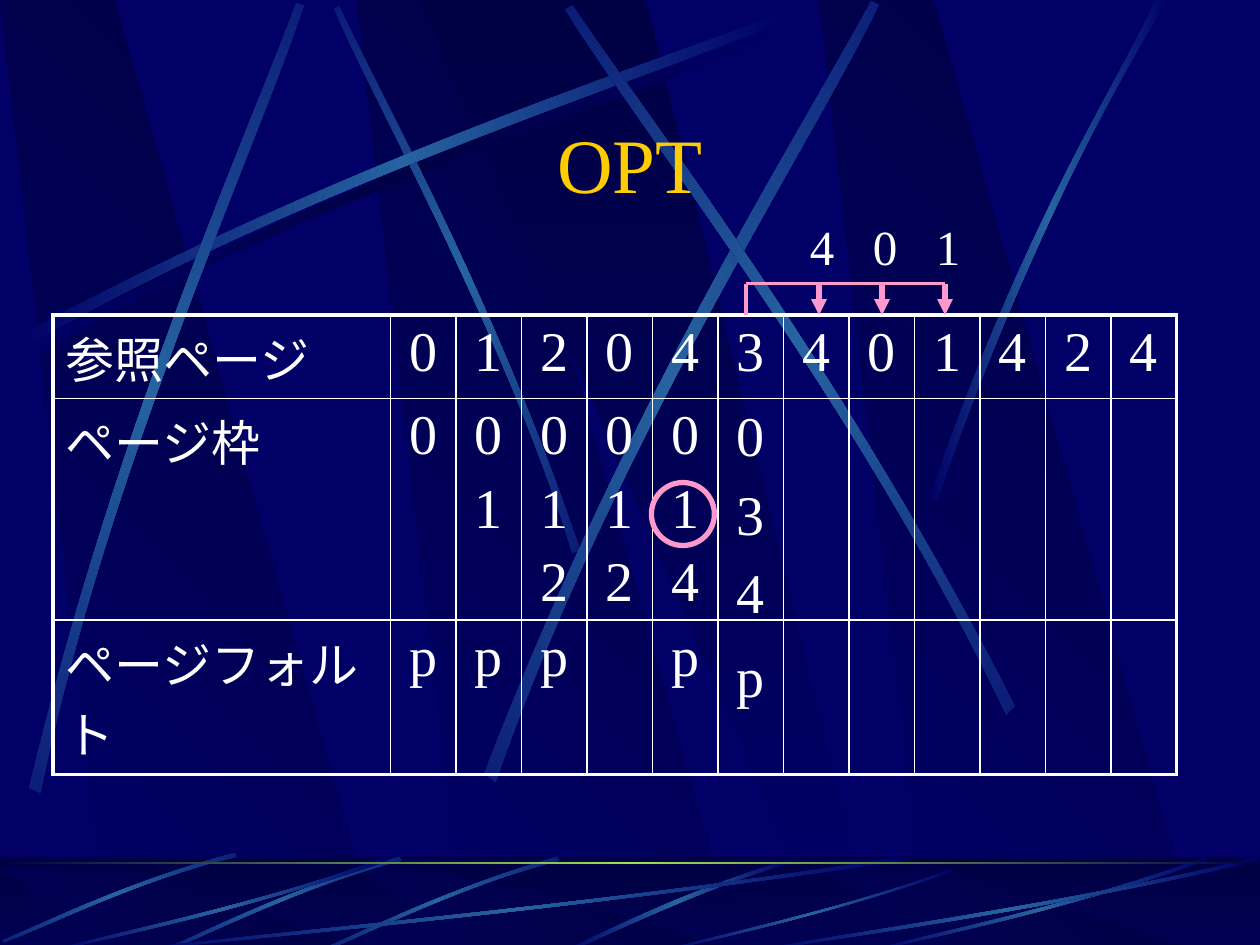
from math import cos, radians, sin
from typing import NamedTuple

from pptx import Presentation
from pptx.dml.color import RGBColor as RGB
from pptx.enum.shapes import MSO_CONNECTOR as CONN, MSO_SHAPE as SHAPE
from pptx.enum.text import MSO_ANCHOR as ANCHOR, MSO_AUTO_SIZE as AUTO, PP_ALIGN as ALIGN
from pptx.oxml import parse_xml
from pptx.oxml.ns import qn
from pptx.util import Inches, Pt
from lxml.etree import SubElement

HEX = {"navy": "000066", "dark": "000044", "blue": "2663A0", "green": "9CE157",
       "gold": "FFCC00", "white": "FFFFFF", "pink": "FF99CC"}
FONT = "Times New Roman"
NS = 'xmlns:a="http://schemas.openxmlformats.org/drawingml/2006/main"'
GLOW = ("navy", "blue", "navy")
SHADE = ("navy", "dark", "navy")


class Streak(NamedTuple):
    out: tuple  # four Bezier points, x and y in turn
    back: tuple
    mid: tuple = (0, 0)  # centre of rotation
    rot: float = 0
    tint: tuple = GLOW


class Label(NamedTuple):
    lines: str
    box: tuple
    size: int
    wrap: bool


TOP = [
    Streak((.2, 2.75, 2.84, 1.34, 5.24, .59, 6.26, .18),
           (6.29, .24, 5.28, .69, 2.54, 1.51, .23, 2.85), tint=SHADE),
    Streak((4.6, 4.36, 3.91, 2.34, 3.02, .77, 2.69, .05),
           (2.65, .07, 2.95, .79, 3.98, 2.58, 4.54, 4.39), (3.62, 2.22), 45),
    Streak((.14, 2.67, 2.78, 1.25, 5.18, .51, 6.2, .1),
           (6.23, .16, 5.22, .61, 2.48, 1.43, .17, 2.77)),
    Streak((.23, 6.25, .93, 3.34, 1.97, 1.05, 2.35, .02),
           (2.41, .04, 2.07, 1.09, .86, 3.68, .32, 6.29), (1.33, 3.16), 311.7),
    Streak((3.85, 6.14, 4.98, 3.2, 6.38, 1.02, 6.92, .01),
           (6.98, .04, 6.49, 1.08, 4.86, 3.55, 3.94, 6.21), (5.43, 3.1), 321.6),
    Streak((8.06, 5.6, 6.7, 2.93, 5.16, .95, 4.55, .04),
           (4.49, .07, 5.07, 1.01, 6.85, 3.25, 7.99, 5.67), (6.27, 2.86), 34.7),
    Streak((7.38, 3.94, 8.14, 1.73, 8.88, .66, 9.17, 0),
           (9.27, 0, 8.36, 1.45, 7.69, 3.22, 7.44, 3.97)),
]
FLOOR = [
    Streak((6.27, 6.82, 5.37, 7.09, 4.77, 7.42, 4.48, 7.54),
           (4.53, 7.55, 4.9, 7.38, 5.71, 7, 6.28, 6.85)),
    *(Streak((x + 1.84, 6.8, x + .97, 7.05, x + .29, 7.4, x - .02, 7.53),
             (x - .01, 7.55, x + .3, 7.43, x + 1.07, 7.03, x + 1.86, 6.83),
             (x + .92, 7.18), 315) for x in (2.58, 1.33)),
    Streak((1.86, 6.77, .99, 7, .33, 7.34, .02, 7.46),
           (.03, 7.48, .34, 7.37, 1.1, 6.98, 1.88, 6.8), (.95, 7.13), 315),
    Streak((7.17, 6.83, 4.49, 7.23, 2.06, 7.44, 1.03, 7.55),
           (1, 7.54, 2.02, 7.41, 4.8, 7.18, 7.14, 6.8)),
    Streak((3.08, 6.83, 1.93, 7.23, .88, 7.44, .43, 7.55),
           (.42, 7.54, .86, 7.41, 2.06, 7.18, 3.07, 6.8)),
    Streak((7.58, 6.91, 6.58, 7.26, 5.67, 7.45, 5.28, 7.55),
           (5.27, 7.54, 5.65, 7.43, 6.69, 7.22, 7.57, 6.89)),
    Streak((9.58, 6.83, 8.43, 7.23, 7.38, 7.44, 6.93, 7.55),
           (6.92, 7.54, 7.36, 7.41, 8.56, 7.18, 9.57, 6.8)),
    Streak((10, 6.83, 8.27, 7.23, 6.69, 7.44, 6.02, 7.55),
           (6, 7.54, 6.66, 7.41, 8.46, 7.18, 9.98, 6.8)),
]
# One character per line of a cell
ROWS = [
    ["参照ページ", *"012043401424"],
    ["ページ枠", "0", "01", "012", "012", "014", *[""] * 7],
    ["ページフォルト", *"ppp", "", "p", *[""] * 7],
]
LABELS = [Label(n, (6.33 + .5 * i, 1.67, .4, .57), 28, False) for i, n in enumerate("401")]
LABELS += [Label("p", (5.7, 5.04, .52, .63), 32, True),
           Label("034", (5.7, 3.13, .52, 1.91), 32, True)]


def paint(shape, tint: tuple, ang: int = 0) -> None:
    """Fill with an even gradient and take off line and shadow."""
    step = 100000 // (len(tint) - 1)
    stops = "".join(f'<a:gs pos="{i * step}"><a:srgbClr val="{HEX[c]}"/></a:gs>'
                    for i, c in enumerate(tint))
    shape.shadow.inherit = False
    shape.line.fill.background()
    shape.fill.background()
    prop = shape.element.spPr
    prop.replace(prop.find(qn("a:noFill")), parse_xml(
        f'<a:gradFill {NS} rotWithShape="1"><a:gsLst>{stops}</a:gsLst>'
        f'<a:lin ang="{ang * 60000}" scaled="1"/></a:gradFill>'))


def outline(shapes, pts: list):
    pts = [(Inches(x), Inches(y)) for x, y in pts]
    pen = shapes.build_freeform(*pts[0], scale=1.0)
    pen.add_line_segments(pts[1:], close=True)
    return pen.convert_to_shape()


def bend(shape) -> None:
    """Turn the two long sides of an eight-point outline into curves."""
    track = next(shape.element.iter(qn("a:path")))
    legs = track.findall(qn("a:lnTo"))
    for trio in (legs[:3], legs[4:7]):
        arc = SubElement(track, qn("a:cubicBezTo"))
        trio[0].addprevious(arc)
        for leg in trio:
            arc.append(leg[0])
            track.remove(leg)


def draw_streak(shapes, s: Streak) -> None:
    (cx, cy), a = s.mid, radians(-s.rot)
    flat = s.out + s.back
    pts = [(cx + (x - cx) * cos(a) - (y - cy) * sin(a),
            cy + (x - cx) * sin(a) + (y - cy) * cos(a))
           for x, y in zip(flat[::2], flat[1::2])]
    shape = outline(shapes, pts)
    bend(shape)
    shape.rotation = s.rot
    paint(shape, s.tint)


def draw_bands(shapes, top: float, low: float) -> None:
    for x in (2.83, 0, 6.5):
        band = outline(shapes, [(x + .86, low), (x + 3.02, low), (x + .91, top), (x, top)])
        paint(band, ("navy", "dark"), 315)
    wide = outline(shapes, [(3.33, top), (6.58, low), (6.94, low), (5.13, top)])
    paint(wide, ("dark", "navy"), 90)


def add_rect(shapes, y: float, h: float, tint: tuple, ang: int = 0):
    rect = shapes.add_shape(SHAPE.RECTANGLE, 0, Inches(y), Inches(10), Inches(h))
    paint(rect, tint, ang)
    return rect


def add_backdrop(shapes, master) -> None:
    """Draw the backdrop and hand its shapes over to the slide master."""
    first = len(shapes)
    draw_bands(shapes, 0, 7.52)
    for s in TOP:
        draw_streak(shapes, s)
    add_rect(shapes, 6.8, .75, ("dark", "navy"), 90)
    draw_bands(shapes, 6.88, 7.55)
    veil = add_rect(shapes, 6.8, .75, ("dark", "dark"))
    veil.fill.solid()
    veil.fill.fore_color.rgb = RGB.from_string(HEX["dark"])
    tone = veil.element.spPr.find(qn("a:solidFill"))[0]
    SubElement(tone, qn("a:alpha"), val="50000")
    for s in FLOOR:
        draw_streak(shapes, s)
    add_rect(shapes, 6.84, .02, ("dark", "green", "dark"))

    front = master.shapes[0].element
    for i, shape in enumerate(list(shapes)[first:]):
        shape.element.nvSpPr.cNvPr.set("id", str(100 + i))
        front.addprevious(shape.element)


def write(frame, lines, size: int, align=None, color: str = "white") -> None:
    for i, line in enumerate(lines):
        para = frame.add_paragraph() if i else frame.paragraphs[0]
        para.alignment = align
        if i:
            para.space_before = Pt(size * .2)
        run = para.add_run()
        run.text = line
        run.font.size, run.font.name = Pt(size), FONT
        run.font.color.rgb = RGB.from_string(HEX[color])


def add_grid(shapes) -> None:
    frame = shapes.add_table(3, 13, Inches(.42), Inches(2.5), Inches(8.92), Inches(3.18))
    grid = frame.table
    grid.first_row = grid.horz_banding = False
    for c, col in enumerate(grid.columns):
        col.width = Inches(.52 if c else 2.68)
    for r, row in enumerate(ROWS):
        grid.rows[r].height = Inches(.6)
        for c, text in enumerate(row):
            cell = grid.cell(r, c)
            edges = {"L": c == 0, "R": c == 12, "T": r == 0, "B": r == 2}
            for side, outer in edges.items():
                cell._tc.get_or_add_tcPr().append(parse_xml(
                    f'<a:ln{side} {NS} w="{Pt(2.25 if outer else 1)}"><a:solidFill>'
                    f'<a:srgbClr val="{HEX["white"]}"/></a:solidFill></a:ln{side}>'))
            cell.fill.background()
            if c:
                write(cell.text_frame, text, 32, ALIGN.CENTER)
            else:
                write(cell.text_frame, [text], 28)
    frame.height = Inches(3.18)


def add_line(shapes, x1: float, y1: float, x2: float, y2: float, head: bool = False) -> None:
    line = shapes.add_connector(CONN.STRAIGHT, *map(Inches, (x1, y1, x2, y2)))
    line.line.color.rgb = RGB.from_string(HEX["pink"])
    line.line.width = Pt(3 if head else 2.25)
    if head:
        SubElement(line.element.spPr.find(qn("a:ln")), qn("a:tailEnd"), type="triangle")
    SubElement(line.element.spPr, qn("a:effectLst"))


def add_label(shapes, lab: Label) -> None:
    frame = shapes.add_textbox(*map(Inches, lab.box)).text_frame
    frame.word_wrap = lab.wrap
    if not lab.wrap:
        frame.auto_size = AUTO.SHAPE_TO_FIT_TEXT
    write(frame, lab.lines, lab.size, ALIGN.CENTER if lab.wrap else None)


def main() -> None:
    deck = Presentation()
    deck.slide_width, deck.slide_height = Inches(10), Inches(7.5)
    slide = deck.slides.add_slide(deck.slide_layouts[5])
    shapes, master = slide.shapes, deck.slide_master
    master.background.fill.solid()
    master.background.fill.fore_color.rgb = RGB.from_string(HEX["navy"])
    add_backdrop(shapes, master)

    # Title
    title = shapes.title
    title.left, title.top, title.width, title.height = map(Inches, (.75, .88, 8.5, .83))
    title.text_frame.vertical_anchor = ANCHOR.MIDDLE
    write(title.text_frame, ["OPT"], 44, ALIGN.CENTER, "gold")

    # Table, look-ahead arrows and labels
    add_grid(shapes)
    add_line(shapes, 5.92, 2.25, 5.92, 2.5)
    add_line(shapes, 5.92, 2.25, 7.5, 2.25)
    for x in (6.5, 7, 7.5):
        add_line(shapes, x, 2.25, x, 2.5, head=True)
    for lab in LABELS:
        add_label(shapes, lab)

    # Ring around the page to replace
    ring = shapes.add_shape(SHAPE.OVAL, *map(Inches, (5.17, 3.83, .5, .5)))
    ring.shadow.inherit = False
    ring.fill.background()
    ring.line.color.rgb = RGB.from_string(HEX["pink"])
    ring.line.width = Pt(3)
    deck.save("out.pptx")


if __name__ == "__main__":
    main()
